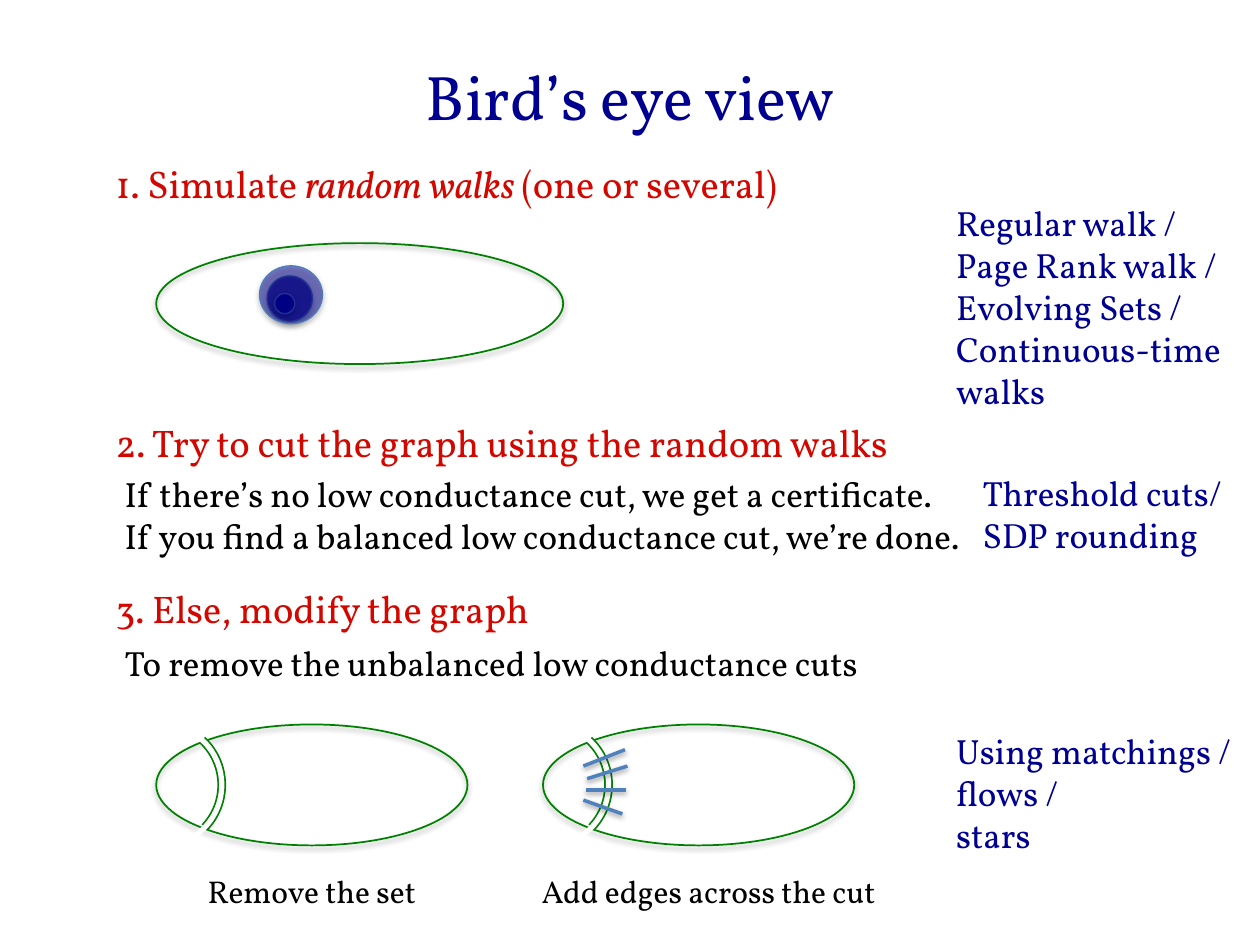
from lxml import etree
from pptx import Presentation
from pptx.dml.color import RGBColor
from pptx.enum import shapes, text
from pptx.oxml.ns import qn
from pptx.util import Emu, Inches, Pt

FONT = "Vollkorn"
COLORS = {"navy": "000090", "red": "D20700", "black": "000000", "white": "FFFFFF",
          "green": "008000", "rim": "4B7EBC", "edge": "4F81BD"}

# Content: left, top, width, height, size, color, paragraphs of (text, italic) runs
TITLE = "Bird’s eye view"
TEXTS = [
    (0.82, 1.22, 5.96, 0.47, 22, "red",
     [[("1. Simulate ", False), ("random walks ", True), ("(one or several)", False)]]),
    (0.82, 3.28, 7.62, 0.47, 22, "red", ["2. Try to cut the graph using the random walks"]),
    (0.82, 4.59, 4.14, 0.47, 22, "red", ["3. Else, modify the graph"]),
    (0.89, 3.70, 7.62, 0.77, 20, "black",
     ["If there’s no low conductance cut, we get a certificate.",
      "If you find a balanced low conductance cut, we’re done."]),
    (0.89, 5.04, 7.62, 0.44, 20, "black", ["To remove the unbalanced low conductance cuts"]),
    (7.49, 1.55, 3.07, 1.78, 20, "navy",
     ["Regular walk /", "Page Rank walk /", "Evolving Sets /", "Continuous-time", "walks"]),
    (7.70, 3.69, 3.07, 0.77, 20, "navy", ["Threshold cuts/", "SDP rounding"]),
    (7.49, 5.74, 3.07, 1.11, 20, "navy", ["Using matchings /", "flows /", "stars"]),
    (1.55, 6.87, 1.87, 0.40, 18, "black", ["Remove the set"]),
    (4.20, 6.87, 3.29, 0.40, 18, "black", ["Add edges across the cut"]),
]
# Ellipses of the walk: left, top, width, height, fill, opacity, line, line width
WALK = [
    (2.12, 2.19, 0.36, 0.36, "navy", 70, "rim", 0.75),
    (1.24, 1.93, 3.23, 0.96, None, 100, "green", 1),
    (2.18, 2.33, 0.16, 0.16, "navy", 100, "rim", 0.75),
    (2.06, 2.11, 0.50, 0.46, "navy", 50, "rim", 0.75),
]
CUT_GRAPHS_LEFT = [1.24, 4.31]
CUT_TOP, CUT_HEIGHT = 5.75, 0.96
# Arcs of a cut: start degree, end degree, color, width
CUT_ARCS = [(311.35, 45, "green", 5), (297, 57.4, "white", 3)]
ADDED_EDGES = [(4.63, 6.08, 4.96, 5.95), (4.66, 6.18, 4.98, 6.08),
               (4.65, 6.27, 4.97, 6.27), (4.63, 6.35, 4.94, 6.46)]


def rgb(name):
    return RGBColor.from_string(COLORS[name])


def write(frame, paragraphs, size=20, color="black", align=None):
    for index, runs in enumerate(paragraphs):
        paragraph = frame.paragraphs[0] if index == 0 else frame.add_paragraph()
        paragraph.alignment = align
        for words, italic in [(runs, False)] if isinstance(runs, str) else runs:
            run = paragraph.add_run()
            run.text = words
            run.font.name, run.font.size = FONT, Pt(size)
            run.font.italic = italic
            run.font.color.rgb = rgb(color)


def set_line(shape, color, width):
    shape.line.color.rgb = rgb(color)
    shape.line.width = Pt(width)


def add_effects(shape, alpha=None, distance=1.8):
    """Replace the theme's shadow with a soft one below, or with none."""
    effects = etree.SubElement(shape._element.spPr, qn("a:effectLst"))
    if alpha:
        shadow = etree.SubElement(effects, qn("a:outerShdw"), blurRad=str(Pt(3.1)),
                                  dist=str(Pt(distance)), dir="5400000", rotWithShape="0")
        black = etree.SubElement(shadow, qn("a:srgbClr"), val=COLORS["black"])
        etree.SubElement(black, qn("a:alpha"), val=str(alpha * 1000))


def add_outline(slide, kind, box, line, width, fill=None, opacity=100):
    shape = slide.shapes.add_shape(kind, *map(Inches, box))
    if fill:
        shape.fill.solid()
        shape.fill.fore_color.rgb = rgb(fill)
        if opacity < 100:
            color = shape._element.spPr.find(qn("a:solidFill"))[0]
            etree.SubElement(color, qn("a:alpha"), val=str(opacity * 1000))
    else:
        shape.fill.background()
    set_line(shape, line, width)
    return shape


def main():
    presentation = Presentation()
    presentation.slide_width, presentation.slide_height = Inches(10), Inches(7.5)
    slide = presentation.slides.add_slide(presentation.slide_layouts[5])

    # Title
    title = slide.shapes.title
    title.left, title.top, title.width, title.height = map(Inches, (0.5, 0.3, 9, 0.91))
    title.text_frame.vertical_anchor = text.MSO_ANCHOR.MIDDLE
    write(title.text_frame, [TITLE], size=36, color="navy", align=text.PP_ALIGN.CENTER)

    # Random walk spreading in a graph
    oval, arc = shapes.MSO_SHAPE.OVAL, shapes.MSO_SHAPE.ARC
    for *box, fill, opacity, line, width in WALK:
        add_effects(add_outline(slide, oval, box, line, width, fill, opacity), alpha=35)

    # Graphs with a cut near the left end
    for left in CUT_GRAPHS_LEFT:
        graph = add_outline(slide, oval, (left, CUT_TOP, 2.47, CUT_HEIGHT), "green", 1)
        add_effects(graph, alpha=35)
        for start, end, color, width in CUT_ARCS:
            cut = add_outline(slide, arc, (left - 0.42, CUT_TOP, 0.94, CUT_HEIGHT), color, width)
            # Angles count 60000 to the degree, adjustments 100000 to the unit
            cut.adjustments[0], cut.adjustments[1] = start * 0.6, end * 0.6
            add_effects(cut)

    # Edges added across the second cut
    for ends in ADDED_EDGES:
        edge = slide.shapes.add_connector(shapes.MSO_CONNECTOR.STRAIGHT, *map(Inches, ends))
        set_line(edge, "edge", 2)
        add_effects(edge, alpha=38, distance=1.6)

    # Steps, remarks and captions
    for *box, size, color, paragraphs in TEXTS:
        frame = slide.shapes.add_textbox(*map(Inches, box)).text_frame
        frame.word_wrap = True
        frame.auto_size = text.MSO_AUTO_SIZE.SHAPE_TO_FIT_TEXT
        write(frame, paragraphs, size=size, color=color)

    presentation.save("out.pptx")


if __name__ == "__main__":
    main()
